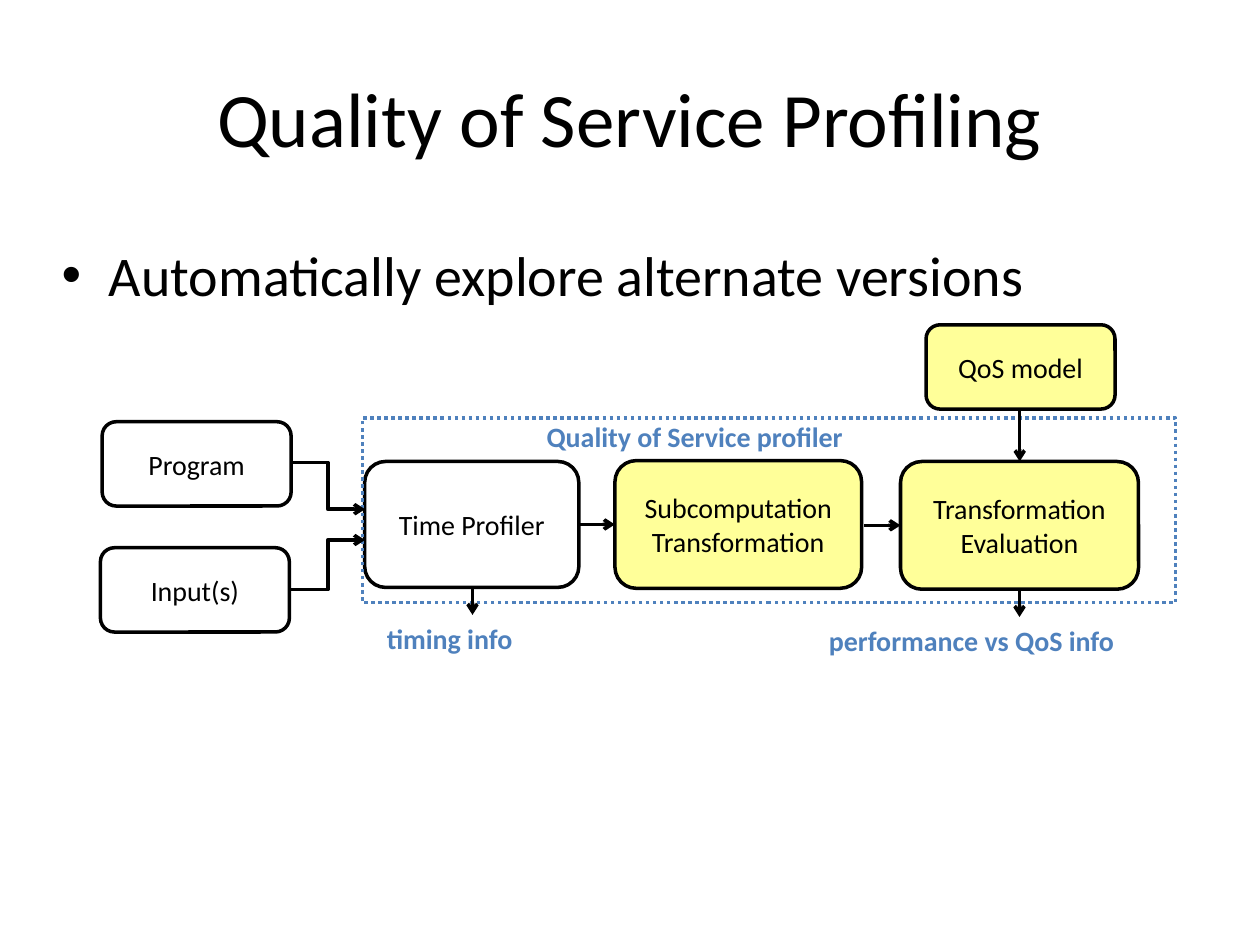
from lxml.etree import SubElement
from pptx import Presentation
from pptx.dml.color import RGBColor
from pptx.enum.dml import MSO_LINE
from pptx.enum.shapes import MSO_CONNECTOR as Link, MSO_SHAPE as Shape
from pptx.enum.text import MSO_ANCHOR as Anchor, PP_ALIGN as Align
from pptx.oxml.ns import qn
from pptx.util import Pt

BLACK, BLUE, YELLOW = "000000", "4F81BD", "FFFF99"
FONT = "Calibri"
LINE = 2

TITLE = "Quality of Service Profiling"
BULLET = "Automatically explore alternate versions"

# text, left, top, width, height, fill
SMALL = (108, 48.2)
STEPS = [
    ("QoS model", 529.2, 185.6, *SMALL, YELLOW),
    ("Program", 58.4, 241, *SMALL, None),
    ("Input(s)", 57.4, 313, *SMALL, None),
    ("Time Profiler", 208.4, 263.7, 122.4, 72, None),
    ("Subcomputation Transformation", 351.4, 263.2, 141, 73, YELLOW),
    ("Transformation\vEvaluation", 514.6, 263.7, 136, 73, YELLOW),
]
PROFILER_FRAME = (207.2, 238.8, 464.6, 105.6)

# text, left, top, width
LABELS = [
    ("Quality of Service profiler", 305.3, 236.2, 244),
    ("timing info", 214, 351.4, 112.3),
    ("performance vs QoS info", 466.6, 352.8, 232.6),
]
LABEL_HEIGHT = 26.6

# kind, from x, from y, to x, to y
ARROWS = [
    (Link.ELBOW, 166, 264.2, 208.6, 291),
    (Link.ELBOW, 166, 337, 208.6, 308.6),
    (Link.STRAIGHT, 331, 299.7, 351.4, 299.7),
    (Link.STRAIGHT, 494, 300.2, 514.6, 300.2),
    (Link.STRAIGHT, 582.7, 233.6, 582.7, 263.7),
    (Link.STRAIGHT, 270, 335.8, 270, 351.4),
    (Link.STRAIGHT, 582.6, 337, 582.6, 352.6),
]


def rgb(value):
    return RGBColor.from_string(value)


def points(*lengths):
    return [Pt(length) for length in lengths]


def write(box, text, size, color=BLACK, align=Align.LEFT, anchor=Anchor.TOP, bold=False):
    frame = box.text_frame
    frame.word_wrap = True
    frame.vertical_anchor = anchor
    para = frame.paragraphs[0]
    para.text = text
    para.alignment = align
    para.font.name = FONT
    para.font.size = Pt(size)
    para.font.bold = bold
    para.font.color.rgb = rgb(color)
    return para


def add_text(page, place, text, size, **style):
    return write(page.shapes.add_textbox(*points(*place)), text, size, **style)


def add_bullet(para, indent):
    properties = para._p.get_or_add_pPr()
    properties.set("marL", str(Pt(indent)))
    properties.set("indent", str(-Pt(indent)))
    SubElement(properties, qn("a:buFont"), typeface="Arial")
    SubElement(properties, qn("a:buChar"), char="•")


def add_box(page, kind, place, fill=None, line=BLACK):
    box = page.shapes.add_shape(kind, *points(*place))
    box.shadow.inherit = False
    if fill:
        box.fill.solid()
        box.fill.fore_color.rgb = rgb(fill)
    else:
        box.fill.background()
    box.line.color.rgb = rgb(line)
    box.line.width = Pt(LINE)
    return box


def add_arrow(page, kind, *ends):
    arrow = page.shapes.add_connector(kind, *points(*ends))
    arrow.line.color.rgb = rgb(BLACK)
    arrow.line.width = Pt(LINE)
    SubElement(arrow.line._get_or_add_ln(), qn("a:tailEnd"), type="arrow")
    SubElement(arrow._element.spPr, qn("a:effectLst"))


def main():
    deck = Presentation()
    deck.slide_width, deck.slide_height = points(720, 540)
    page = deck.slides.add_slide(deck.slide_layouts[6])

    add_text(page, (36, 21.6, 648, 90), TITLE, 44, align=Align.CENTER, anchor=Anchor.MIDDLE)
    add_bullet(add_text(page, (28.1, 134, 673.2, 363), BULLET, 32), 27)

    for text, *place, fill in STEPS:
        step = add_box(page, Shape.ROUNDED_RECTANGLE, place, fill)
        write(step, text, 16, align=Align.CENTER, anchor=Anchor.MIDDLE)
    frame = add_box(page, Shape.RECTANGLE, PROFILER_FRAME, line=BLUE)
    frame.line.dash_style = MSO_LINE.ROUND_DOT
    for text, *place in LABELS:
        add_text(page, (*place, LABEL_HEIGHT), text, 16, color=BLUE, bold=True)
    for arrow in ARROWS:
        add_arrow(page, *arrow)

    deck.save("out.pptx")


if __name__ == "__main__":
    main()
